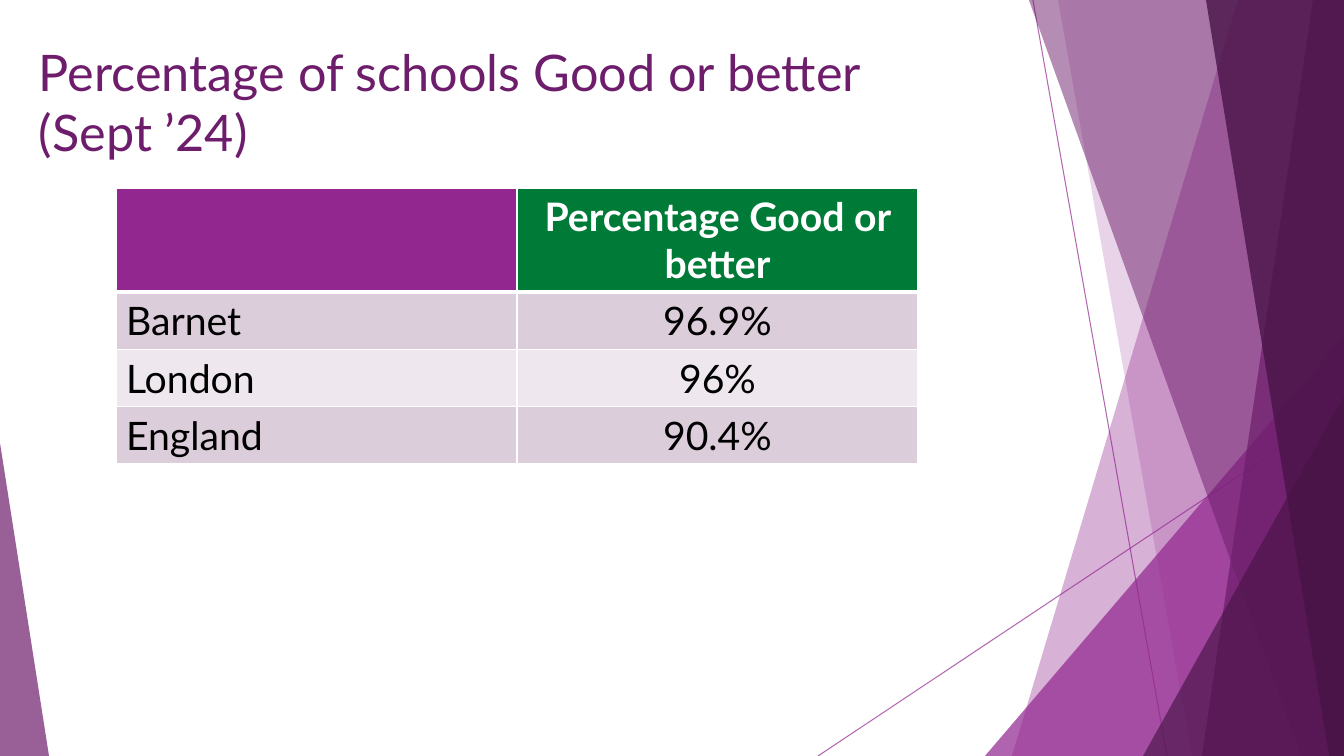
from lxml import etree
from pptx import Presentation
from pptx.dml.color import RGBColor
from pptx.enum.shapes import MSO_CONNECTOR, MSO_SHAPE
from pptx.enum.text import MSO_ANCHOR, PP_ALIGN
from pptx.oxml.ns import qn
from pptx.util import Emu, Pt

STRAIGHT = MSO_CONNECTOR.STRAIGHT
TRIANGLE = MSO_SHAPE.ISOSCELES_TRIANGLE
LEFT, CENTER = PP_ALIGN.LEFT, PP_ALIGN.CENTER
TOP = MSO_ANCHOR.TOP

PX = 914400 / 100.8  # EMU in one pixel
WIDTH, HEIGHT = 1344, 756
FONT = "Lato"
PURPLE, PLUM, DARK = "92278F", "6D1D6B", "491447"
GREEN, WHITE, BLACK = "007A37", "FFFFFF", "000000"
BANDS = ["DCCDDB", "EEE8EE"]


def px(length):
    return Emu(round(length * PX))


def color(hex_code):
    return RGBColor.from_string(hex_code)


def set_alpha(shape, percent):
    """Make the solid colour of a fill or line partly transparent."""
    for clr in shape._element.spPr.iter(qn("a:srgbClr")):
        etree.SubElement(clr, qn("a:alpha"), val=str(percent * 1000))


def paint(shape, hex_code, alpha):
    shape.shadow.inherit = False
    shape.fill.solid()
    shape.fill.fore_color.rgb = color(hex_code)
    shape.line.fill.background()
    set_alpha(shape, alpha)


def add_ray(slide, x1, y1, x2, y2):
    ray = slide.shapes.add_connector(STRAIGHT, px(x1), px(y1), px(x2), px(y2))
    ray.line.color.rgb = color(PURPLE)
    ray.line.width = Pt(0.75)
    set_alpha(ray, 70)
    etree.SubElement(ray._element.spPr, qn("a:effectLst"))


def add_shard(slide, top_x, bottom_x, hex_code, alpha):
    """Full-height panel from a slanted left edge to the slide's right edge."""
    outline = slide.shapes.build_freeform(top_x, 0, scale=PX)
    outline.add_line_segments([(WIDTH, 0), (WIDTH, HEIGHT), (bottom_x, HEIGHT)])
    paint(outline.convert_to_shape(), hex_code, alpha)


def add_corner(slide, left, top, width, apex, hex_code, alpha):
    """Triangle standing on the slide's bottom edge."""
    corner = slide.shapes.add_shape(
        TRIANGLE, px(left), px(top), px(width), px(HEIGHT - top))
    corner.adjustments[0] = apex
    paint(corner, hex_code, alpha)


def write(frame, text, size=28, ink=BLACK, bold=False, align=LEFT):
    paragraph = frame.paragraphs[0]
    paragraph.alignment = align
    run = paragraph.add_run()
    run.text = text
    run.font.name = FONT
    run.font.size = Pt(size)
    run.font.bold = bold
    run.font.color.rgb = color(ink)


def set_borders(cell, **widths):
    """Draw white borders, given as point widths by side."""
    tc_pr = cell._tc.get_or_add_tcPr()
    for index, side in enumerate("LRTB"):
        line = etree.Element(qn(f"a:ln{side}"), w=str(Pt(widths.get(side, 1))))
        fill = etree.SubElement(line, qn("a:solidFill"))
        etree.SubElement(fill, qn("a:srgbClr"), val=WHITE)
        tc_pr.insert(index, line)


def add_backdrop(slide):
    add_ray(slide, 1033, 0, 1167, HEIGHT)
    add_ray(slide, WIDTH, 406, 818, HEIGHT)
    add_shard(slide, 1238, 1012, PURPLE, 36)
    add_shard(slide, 1058, 1192, PURPLE, 20)
    add_corner(slide, 985, 336, 359, 1, PURPLE, 72)
    add_shard(slide, 1029, 1301, PLUM, 50)
    add_shard(slide, 1313, 1202, PLUM, 70)
    add_shard(slide, 1206, 1329, DARK, 80)
    add_corner(slide, 1143, 396, 201, 1, DARK, 66)
    add_corner(slide, 0, 443, 49, 0, PLUM, 70)


def add_title(slide, text):
    title = slide.shapes.add_textbox(px(29), px(36), px(948), px(81))
    title.text_frame.word_wrap = True
    title.text_frame.vertical_anchor = TOP
    write(title.text_frame, text, size=36, ink=PLUM)


def add_ratings(slide, rows):
    header_height, row_height = 104, 57
    height = header_height + row_height * (len(rows) - 1)
    ratings = slide.shapes.add_table(
        len(rows), 2, px(116), px(188), px(802), px(height)).table
    for r, row in enumerate(rows):
        header = r == 0
        ratings.rows[r].height = px(header_height if header else row_height)
        for c, text in enumerate(row):
            cell = ratings.cell(r, c)
            cell.fill.solid()
            fill = (PURPLE, GREEN)[c] if header else BANDS[(r - 1) % 2]
            cell.fill.fore_color.rgb = color(fill)
            set_borders(cell, T=3 if r == 1 else 1, B=3 if header else 1)
            if text:
                write(cell.text_frame, text, ink=WHITE if header else BLACK,
                      bold=header, align=CENTER if c else LEFT)


def main():
    prs = Presentation()
    prs.slide_width, prs.slide_height = px(WIDTH), px(HEIGHT)
    slide = prs.slides.add_slide(prs.slide_layouts[6])

    # Decorative shards
    add_backdrop(slide)

    # Title and table
    add_title(slide, "Percentage of schools Good or better (Sept ’24)")
    add_ratings(slide, [
        ("", "Percentage Good or better"),
        ("Barnet", "96.9%"),
        ("London", "96%"),
        ("England", "90.4%"),
    ])
    prs.save("out.pptx")


if __name__ == "__main__":
    main()
